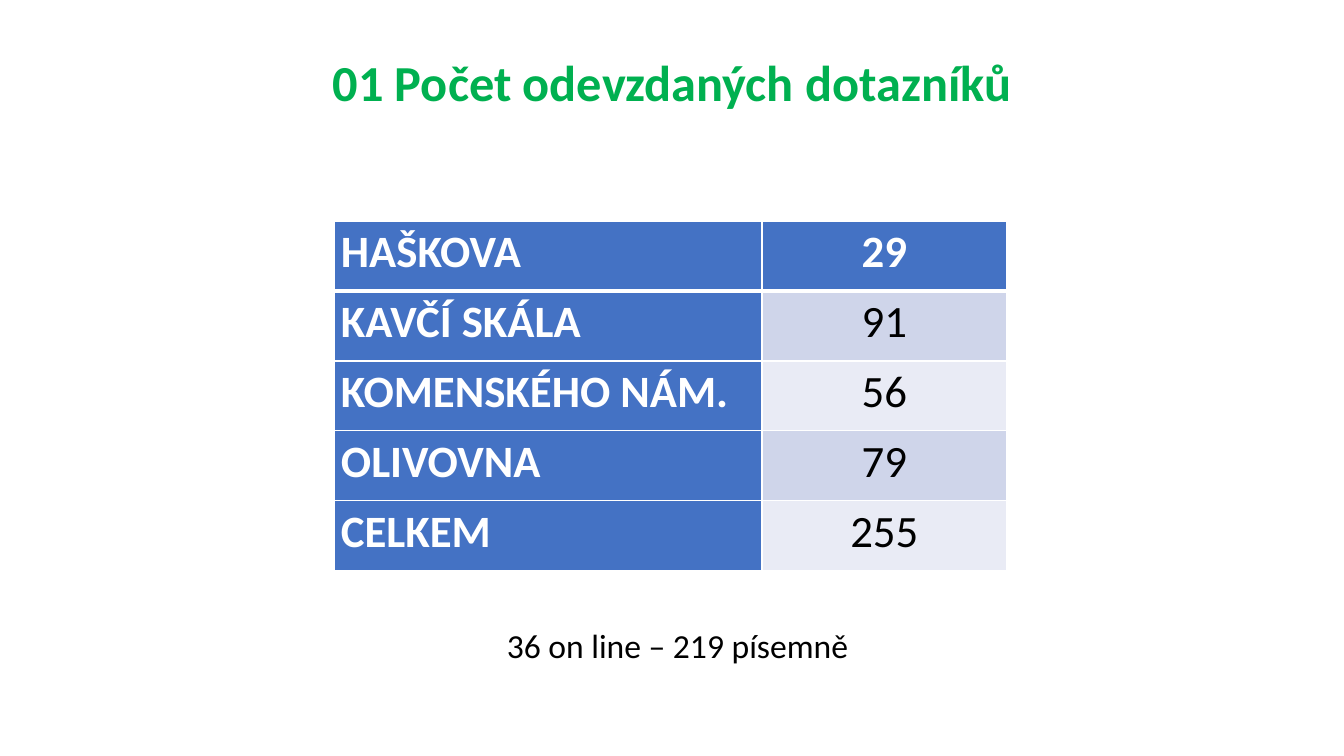
from dataclasses import dataclass

from lxml.etree import SubElement
from pptx import Presentation
from pptx.dml.color import RGBColor
from pptx.enum.text import MSO_ANCHOR, PP_ALIGN
from pptx.oxml.ns import qn
from pptx.util import Pt

TITLE = "01 Počet odevzdaných dotazníků"
COUNTS = [
    ("HAŠKOVA", "29"),
    ("KAVČÍ SKÁLA", "91"),
    ("KOMENSKÉHO NÁM.", "56"),
    ("OLIVOVNA", "79"),
    ("CELKEM", "255"),
]
NOTE = "36 on line – 219 písemně"

SLIDE_SIZE = (1344, 756)
TITLE_BOX = (93, 40, 1159, 91)
NOTE_BOX = (334, 617, 687, 51)
TABLE_LEFT, TABLE_TOP = 334, 221
COLUMN_WIDTHS = (428, 245)
ROW_HEIGHT = 70
CELL_INSET = 7


@dataclass(frozen=True)
class Theme:
    font: str = "Calibri"
    title_size: int = 36
    table_size: int = 32
    note_size: int = 24
    green: str = "00B050"
    blue: str = "4472C4"
    bands: tuple = ("E9EBF5", "CFD5EA")
    white: str = "FFFFFF"
    black: str = "000000"


THEME = Theme()


def px(length):
    return round(length * 914400 / 100.8)


def write(frame, text, size, color, bold=False, align=PP_ALIGN.CENTER,
          spacing=1.07, after=8):
    para = frame.paragraphs[0]
    para.text = text
    para.alignment = align
    para.line_spacing = spacing
    para.space_after = Pt(after)
    para.font.name = THEME.font
    para.font.size = Pt(size)
    para.font.bold = bold
    para.font.color.rgb = RGBColor.from_string(color)


def add_text(page, box, text, size, color, anchor=MSO_ANCHOR.TOP, **style):
    frame = page.shapes.add_textbox(*map(px, box)).text_frame
    frame.word_wrap = True
    frame.vertical_anchor = anchor
    write(frame, text, size, color, **style)


def set_borders(cell, **widths):
    """Draw white cell borders; widths in points, keyed L, R, T, B."""
    properties = cell._tc.get_or_add_tcPr()
    for side, width in widths.items():
        line = SubElement(properties, qn(f"a:ln{side}"), w=str(Pt(width)))
        fill = SubElement(line, qn("a:solidFill"))
        SubElement(fill, qn("a:srgbClr"), val=THEME.white)


def add_counts(page):
    table = page.shapes.add_table(
        len(COUNTS), len(COLUMN_WIDTHS), px(TABLE_LEFT), px(TABLE_TOP),
        px(sum(COLUMN_WIDTHS)), px(ROW_HEIGHT * len(COUNTS))).table
    for column, width in zip(table.columns, COLUMN_WIDTHS):
        column.width = px(width)
    for r, values in enumerate(COUNTS):
        table.rows[r].height = px(ROW_HEIGHT)
        for c, value in enumerate(values):
            cell = table.cell(r, c)
            heading = r == 0 or c == 0
            set_borders(cell, L=1, R=1, T=3 if r == 1 else 1,
                        B=3 if r == 0 else 1)
            cell.fill.solid()
            cell.fill.fore_color.rgb = RGBColor.from_string(
                THEME.blue if heading else THEME.bands[r % 2])
            cell.margin_left = cell.margin_right = px(CELL_INSET)
            cell.margin_top = cell.margin_bottom = 0
            write(cell.text_frame, value, THEME.table_size,
                  THEME.white if heading else THEME.black, bold=heading,
                  align=PP_ALIGN.LEFT if c == 0 else PP_ALIGN.CENTER)


def main():
    deck = Presentation()
    deck.slide_width, deck.slide_height = map(px, SLIDE_SIZE)
    page = deck.slides.add_slide(deck.slide_layouts[6])
    add_text(page, TITLE_BOX, TITLE, THEME.title_size, THEME.green,
             anchor=MSO_ANCHOR.MIDDLE, bold=True, spacing=0.9, after=0)
    add_counts(page)
    add_text(page, NOTE_BOX, NOTE, THEME.note_size, THEME.black)
    deck.save("out.pptx")


if __name__ == "__main__":
    main()
